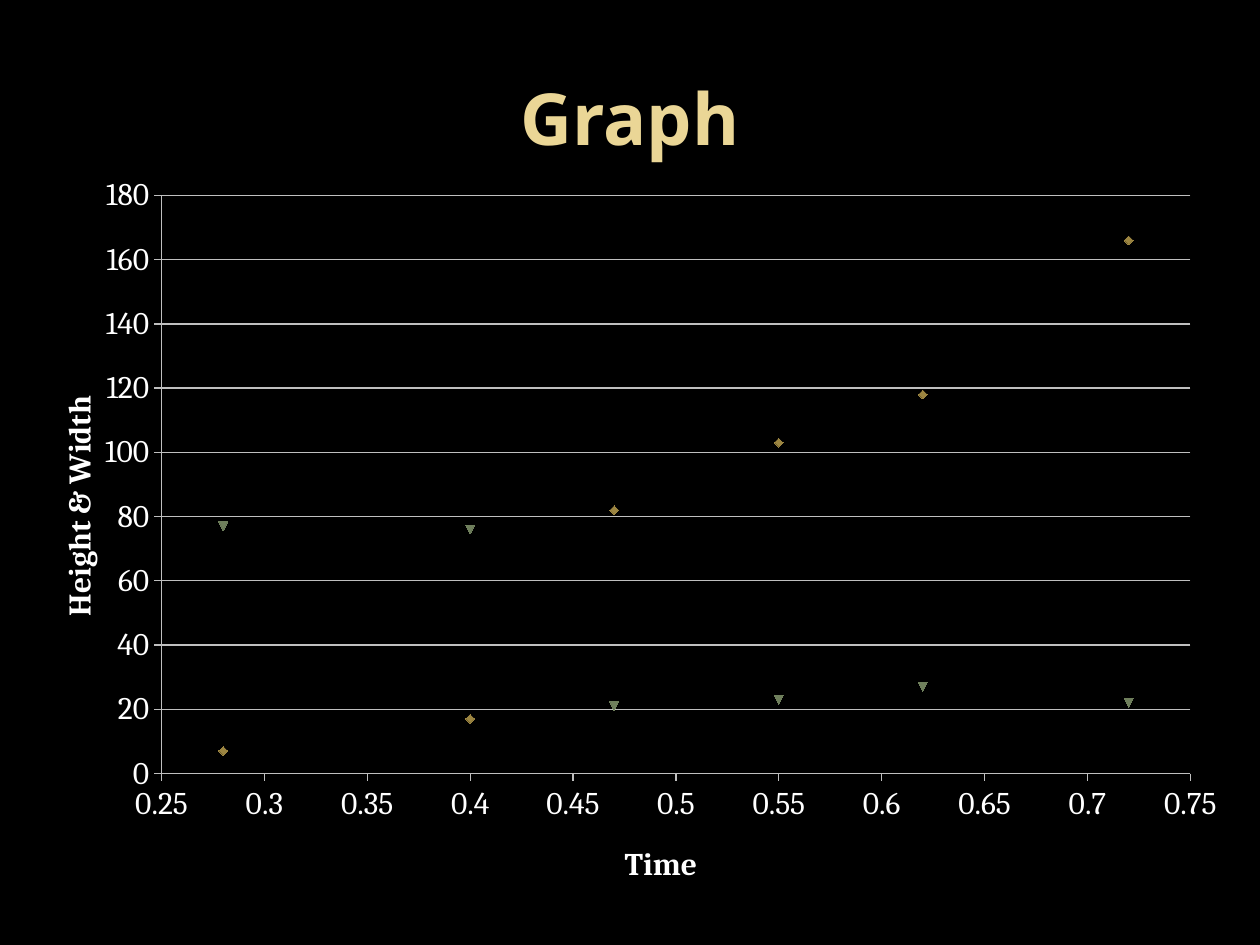
from dataclasses import dataclass

from lxml.etree import SubElement
from pptx import Presentation
from pptx.chart.axis import ValueAxis
from pptx.chart.chart import Chart
from pptx.chart.data import XyChartData
from pptx.chart.series import XySeries
from pptx.dml.color import RGBColor
from pptx.enum.chart import XL_CHART_TYPE as ChartType
from pptx.enum.chart import XL_MARKER_STYLE as MarkerStyle
from pptx.enum.chart import XL_TICK_LABEL_POSITION as LabelPosition
from pptx.enum.chart import XL_TICK_MARK as TickMark
from pptx.enum.text import MSO_ANCHOR as Anchor
from pptx.enum.text import PP_ALIGN as Align
from pptx.oxml.ns import qn
from pptx.oxml.xmlchemy import BaseOxmlElement as Element
from pptx.slide import Slide
from pptx.util import Pt

COLORS = {
    "background": "000000",
    "title": "EAD696",
    "text": "FFFFFF",
    "rule": "BFBFBF",
    "height": "9C8541",
    "width": "6F7F5C",
}
TIMES = (0.28, 0.4, 0.47, 0.55, 0.62, 0.72)
FIRST_SPACING = 5
CHART_WIDTH, CHART_HEIGHT = Pt(678.2), Pt(414)


@dataclass(frozen=True)
class Measure:
    name: str
    values: tuple[int, ...]
    color: str
    marker: MarkerStyle


@dataclass(frozen=True)
class Scale:
    title: str
    low: float
    high: float
    step: float


MEASURES = (
    Measure("Series 1", (7, 17, 82, 103, 118, 166), "height", MarkerStyle.DIAMOND),
    Measure("Series 2", (77, 76, 21, 23, 27, 22), "width", MarkerStyle.AUTOMATIC),
)
TIME_SCALE = Scale("Time", 0.25, 0.75, 0.05)
SIZE_SCALE = Scale("Height & Width", 0, 180, 20)


def color(name: str) -> RGBColor:
    return RGBColor.from_string(COLORS[name])


def add_title(page: Slide, text: str) -> None:
    box = page.shapes.add_textbox(Pt(36), Pt(21.6), Pt(648), Pt(90))
    frame = box.text_frame
    frame.word_wrap = True
    frame.vertical_anchor = Anchor.MIDDLE
    para = frame.paragraphs[0]
    para.alignment = Align.CENTER
    span = para.add_run()
    span.text = text
    span.font.name = "Open Sans"
    span.font.size = Pt(41)
    span.font.bold = True
    span.font.color.rgb = color("title")


def style_axis(axis: ValueAxis, scale: Scale, gridlines: bool) -> None:
    axis.minimum_scale = scale.low
    axis.maximum_scale = scale.high
    axis.major_unit = scale.step
    axis.has_major_gridlines = gridlines
    axis.major_tick_mark = TickMark.OUTSIDE
    axis.minor_tick_mark = TickMark.NONE
    axis.tick_label_position = LabelPosition.NEXT_TO_AXIS
    axis.tick_labels.number_format = "General"
    axis.tick_labels.number_format_is_linked = False
    lines = [axis.format.line]
    if gridlines:
        lines.append(axis.major_gridlines.format.line)
    for line in lines:
        line.width = Pt(0.75)
        line.color.rgb = color("rule")
    span = axis.axis_title.text_frame.paragraphs[0].add_run()
    span.text = scale.title
    span.font.name = "Cambria"
    span.font.size = Pt(18)
    span.font.bold = True
    span.font.color.rgb = color("text")


def style_series(series: XySeries, measure: Measure) -> None:
    series.smooth = False
    series.format.line.fill.background()
    series.marker.style = measure.marker
    series.marker.size = 5
    fill = series.marker.format.fill
    fill.solid()
    fill.fore_color.rgb = color(measure.color)
    series.marker.format.line.fill.background()


def place(part: Element, settings: dict[str, str | float]) -> None:
    for old in part.findall(qn("c:layout")):
        part.remove(old)
    layout = SubElement(part, qn("c:layout"))
    text = part.find(qn("c:tx"))
    if text is None:
        part.insert(0, layout)
    else:
        text.addnext(layout)
    manual = SubElement(layout, qn("c:manualLayout"))
    for tag, value in settings.items():
        SubElement(manual, qn(f"c:{tag}")).set("val", str(value))


def place_parts(chart: Chart) -> None:
    edges = {"xMode": "edge", "yMode": "edge"}
    plot = {
        "layoutTarget": "inner",
        **edges,
        "x": Pt(68.5) / CHART_WIDTH,
        "y": Pt(15.7) / CHART_HEIGHT,
        "w": Pt(588) / CHART_WIDTH,
        "h": Pt(330.4) / CHART_HEIGHT,
    }
    title = {**edges, "x": Pt(6) / CHART_WIDTH, "y": Pt(127) / CHART_HEIGHT}
    place(chart._chartSpace.chart.plotArea, plot)
    place(chart.value_axis.axis_title._element, title)


def drop_blank_points(chart: Chart) -> None:
    for point in list(chart._chartSpace.iter(qn("c:pt"))):
        if point.find(qn("c:v")).text == "None":
            point.getparent().remove(point)


def add_scatter(page: Slide) -> None:
    data = XyChartData()
    for measure in MEASURES:
        series = data.add_series(measure.name)
        readings = zip(TIMES, measure.values)
        for spacing, (time, value) in enumerate(readings, FIRST_SPACING):
            series.add_data_point(time, value)
            for _ in range(spacing - 1):
                series.add_data_point(None, None)
    chart = page.shapes.add_chart(
        ChartType.XY_SCATTER_LINES,
        Pt(23.8),
        Pt(96),
        CHART_WIDTH,
        CHART_HEIGHT,
        data,
    ).chart
    drop_blank_points(chart)
    chart.has_legend = False
    chart.has_title = False
    chart.font.name = "Cambria"
    chart.font.size = Pt(18)
    chart.font.color.rgb = color("text")
    chart.plots[0].vary_by_categories = False
    style_axis(chart.category_axis, TIME_SCALE, False)
    style_axis(chart.value_axis, SIZE_SCALE, True)
    for series, measure in zip(chart.plots[0].series, MEASURES):
        style_series(series, measure)
    place_parts(chart)


def main() -> None:
    deck = Presentation()
    deck.slide_width, deck.slide_height = Pt(720), Pt(540)
    page = deck.slides.add_slide(deck.slide_layouts[6])
    fill = page.background.fill
    fill.solid()
    fill.fore_color.rgb = color("background")
    add_title(page, "Graph")
    add_scatter(page)
    deck.save("out.pptx")


if __name__ == "__main__":
    main()
